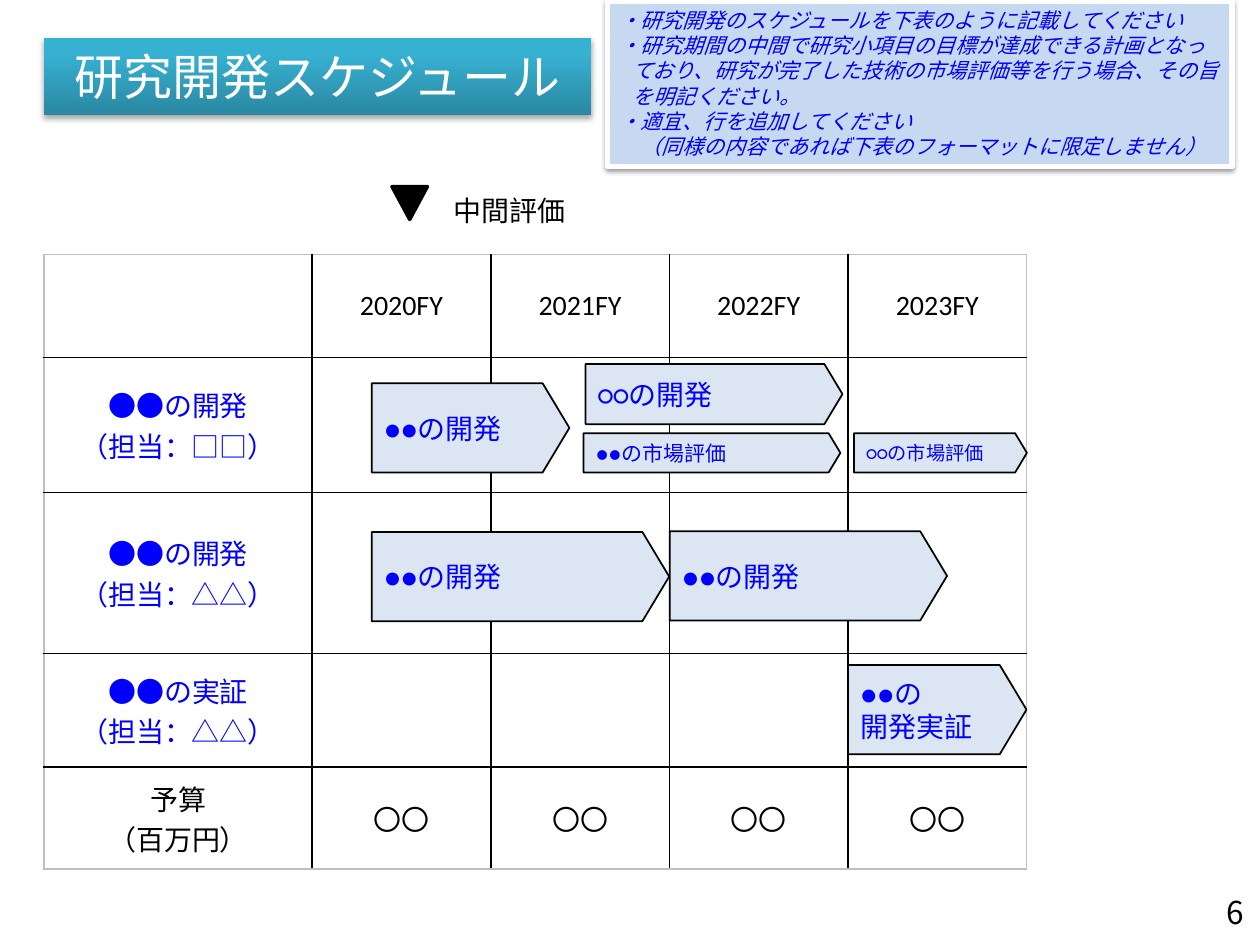
from lxml import etree
from pptx import Presentation
from pptx.dml.color import RGBColor
from pptx.enum import shapes, text
from pptx.oxml import ns
from pptx.util import Pt

BLACK = RGBColor(0x00, 0x00, 0x00)
WHITE = RGBColor(0xFF, 0xFF, 0xFF)
BLUE = RGBColor(0x00, 0x00, 0xFF)
GREY = RGBColor(0xBF, 0xBF, 0xBF)
ARROW_FILL = RGBColor(0xDC, 0xE6, 0xF2)
NOTE_FILL = RGBColor(0xC6, 0xD9, 0xF1)
TITLE_DARK = RGBColor(0x2A, 0x88, 0xA2)
TITLE_LIGHT = RGBColor(0x37, 0xB1, 0xD2)

LATIN = "Calibri"
CJK = "Noto Sans CJK JP"
LEFT, CENTER, RIGHT = text.PP_ALIGN.LEFT, text.PP_ALIGN.CENTER, text.PP_ALIGN.RIGHT
TOP, MIDDLE = text.MSO_ANCHOR.TOP, text.MSO_ANCHOR.MIDDLE
SHAPE = shapes.MSO_SHAPE

COLUMNS = [153.2] + [102.1] * 4
ROWS = [58.9, 77.1, 92, 65.1, 58.3]
CELLS = [
    ["", "2020FY", "2021FY", "2022FY", "2023FY"],
    ["●●の開発\n（担当：□□）"],
    ["●●の開発\n（担当：△△）"],
    ["●●の実証\n（担当：△△）"],
    ["予算\n（百万円）"] + ["〇〇"] * 4,
]
ARROWS = [
    ("●●の開発", 16, 187.2, 73.6, 113, 51),
    ("○○の開発", 16, 309.4, 62.6, 146.8, 34.4),
    ("●●の市場評価", 12, 308.2, 102.2, 146.8, 22.4),
    ("○○の市場評価", 11, 462.8, 102.2, 98.8, 22.4),
    ("●●の開発", 16, 187.2, 158.6, 170, 51),
    ("●●の開発", 16, 357.6, 158.2, 158.4, 51),
    ("●●の\n開発実証", 16, 459.4, 234.6, 102, 51),
]
NOTE = """・研究開発のスケジュールを下表のように記載してください
・研究期間の中間で研究小項目の目標が達成できる計画となっており、研究が完了した技術の市場評価等を行う場合、その旨を明記ください。
・適宜、行を追加してください
\u3000（同様の内容であれば下表のフォーマットに限定しません）""".replace("\\u3000", "　")


def write(tf, content, size=16, color=BLACK, font=LATIN, align=LEFT,
          italic=False, hanging=0):
    for i, line in enumerate(content.split("\n")):
        p = tf.paragraphs[0] if i == 0 else tf.add_paragraph()
        p.alignment = align
        if hanging:
            pPr = p._p.get_or_add_pPr()
            pPr.set("marL", str(Pt(hanging)))
            pPr.set("indent", str(-Pt(hanging)))
        r = p.add_run()
        r.text = line
        r.font.size, r.font.name, r.font.italic = Pt(size), font, italic
        r.font.color.rgb = color
        ea = etree.SubElement(r._r.get_or_add_rPr(), ns.qn("a:ea"))
        ea.set("typeface", font)


def add_box(s, kind, box, fill=None, line=None, width=1, anchor=MIDDLE):
    sp = s.shapes.add_shape(kind, *map(Pt, box))
    sp.shadow.inherit = False
    if fill is not None:
        sp.fill.solid()
        sp.fill.fore_color.rgb = fill
    if line is None:
        sp.line.fill.background()
    else:
        sp.line.color.rgb = line
        sp.line.width = Pt(width)
    sp.text_frame.word_wrap = True
    sp.text_frame.vertical_anchor = anchor
    return sp


def add_shadow(sp, blur, distance, opacity):
    effects = sp._element.spPr.find(ns.qn("a:effectLst"))
    shadow = etree.SubElement(effects, ns.qn("a:outerShdw"), blurRad=str(Pt(blur)),
                              dist=str(Pt(distance)), dir="5400000", rotWithShape="0")
    color = etree.SubElement(shadow, ns.qn("a:srgbClr"), val=str(BLACK))
    etree.SubElement(color, ns.qn("a:alpha"), val=str(opacity * 1000))


def add_title(s, box):
    sp = add_box(s, SHAPE.RECTANGLE, box)
    sp.fill.gradient()
    sp.fill.gradient_angle = 90
    stops = zip(sp.fill.gradient_stops, (0, 0.8), (TITLE_DARK, TITLE_LIGHT))
    for stop, position, color in stops:
        stop.position = position
        stop.color.rgb = color
    add_shadow(sp, 3.1, 1.8, 35)
    write(sp.text_frame, "研究開発スケジュール", size=28, color=WHITE, align=CENTER)


def add_note(s, box):
    sp = add_box(s, SHAPE.RECTANGLE, box, NOTE_FILL, WHITE, 3, TOP)
    add_shadow(sp, 3.1, 1.6, 38)
    write(sp.text_frame, NOTE, size=12, color=BLUE, italic=True, hanging=7.2)


def add_label(s, box, content, wrap=False, inset=None, anchor=TOP, **fmt):
    tf = s.shapes.add_textbox(*map(Pt, box)).text_frame
    tf.word_wrap = wrap
    tf.vertical_anchor = anchor
    if inset is not None:
        tf.margin_left = tf.margin_right = tf.margin_top = tf.margin_bottom = Pt(inset)
    write(tf, content, **fmt)


def add_milestone(s, box):
    x, y, w, h = box
    sp = add_box(s, SHAPE.ISOSCELES_TRIANGLE, (x, y, 20.2, 18.8), BLACK, BLACK, 2)
    sp.rotation = 180
    add_label(s, (x + 28, y + 0.7, w - 28, h - 0.7), "中間評価")


def set_borders(cell, row, col):
    outer = {"a:lnL": col == 0, "a:lnR": col == len(COLUMNS) - 1,
             "a:lnT": row == 0, "a:lnB": row == len(ROWS) - 1}
    tcPr = cell._tc.get_or_add_tcPr()
    for i, (side, is_outer) in enumerate(outer.items()):
        ln = etree.Element(ns.qn(side), w=str(Pt(1)))
        fill = etree.SubElement(ln, ns.qn("a:solidFill"))
        etree.SubElement(fill, ns.qn("a:srgbClr"), val=str(GREY if is_outer else BLACK))
        tcPr.insert(i, ln)


def add_table(s, box):
    table = s.shapes.add_table(len(ROWS), len(COLUMNS), *map(Pt, box)).table
    for column, width in zip(table.columns, COLUMNS):
        column.width = Pt(width)
    for i, height in enumerate(ROWS):
        table.rows[i].height = Pt(height)
        for j in range(len(COLUMNS)):
            cell = table.cell(i, j)
            cell.fill.background()
            set_borders(cell, i, j)
            cell.vertical_anchor = MIDDLE
            cell.margin_left = cell.margin_right = 0
            cell.margin_top = cell.margin_bottom = 0
            if j < len(CELLS[i]) and CELLS[i][j]:
                write(cell.text_frame, CELLS[i][j], align=CENTER,
                      font=LATIN if i == 0 else CJK,
                      color=BLUE if 0 < i < len(ROWS) - 1 else BLACK)


def add_schedule(s, box):
    add_table(s, box)
    for content, size, x, y, w, h in ARROWS:
        sp = add_box(s, SHAPE.PENTAGON, (box[0] + x, box[1] + y, w, h), ARROW_FILL, BLACK)
        sp.adjustments[0] = 0.3
        write(sp.text_frame, content, size=size, color=BLUE, hanging=7.2)


def main():
    prs = Presentation()
    prs.slide_width, prs.slide_height = Pt(720), Pt(540)
    s = prs.slides.add_slide(prs.slide_layouts[6])
    add_title(s, (25.2, 21.6, 312.5, 44))
    add_note(s, (347, 0.7, 357, 94.3))
    add_milestone(s, (224, 106.6, 107, 27.4))
    add_schedule(s, (25.2, 145.4, sum(COLUMNS), sum(ROWS)))
    add_label(s, (669, 512, 41.6, 18), "6", wrap=True, inset=0, anchor=MIDDLE,
              size=18, font=CJK, align=RIGHT)
    prs.save("out.pptx")


if __name__ == "__main__":
    main()
